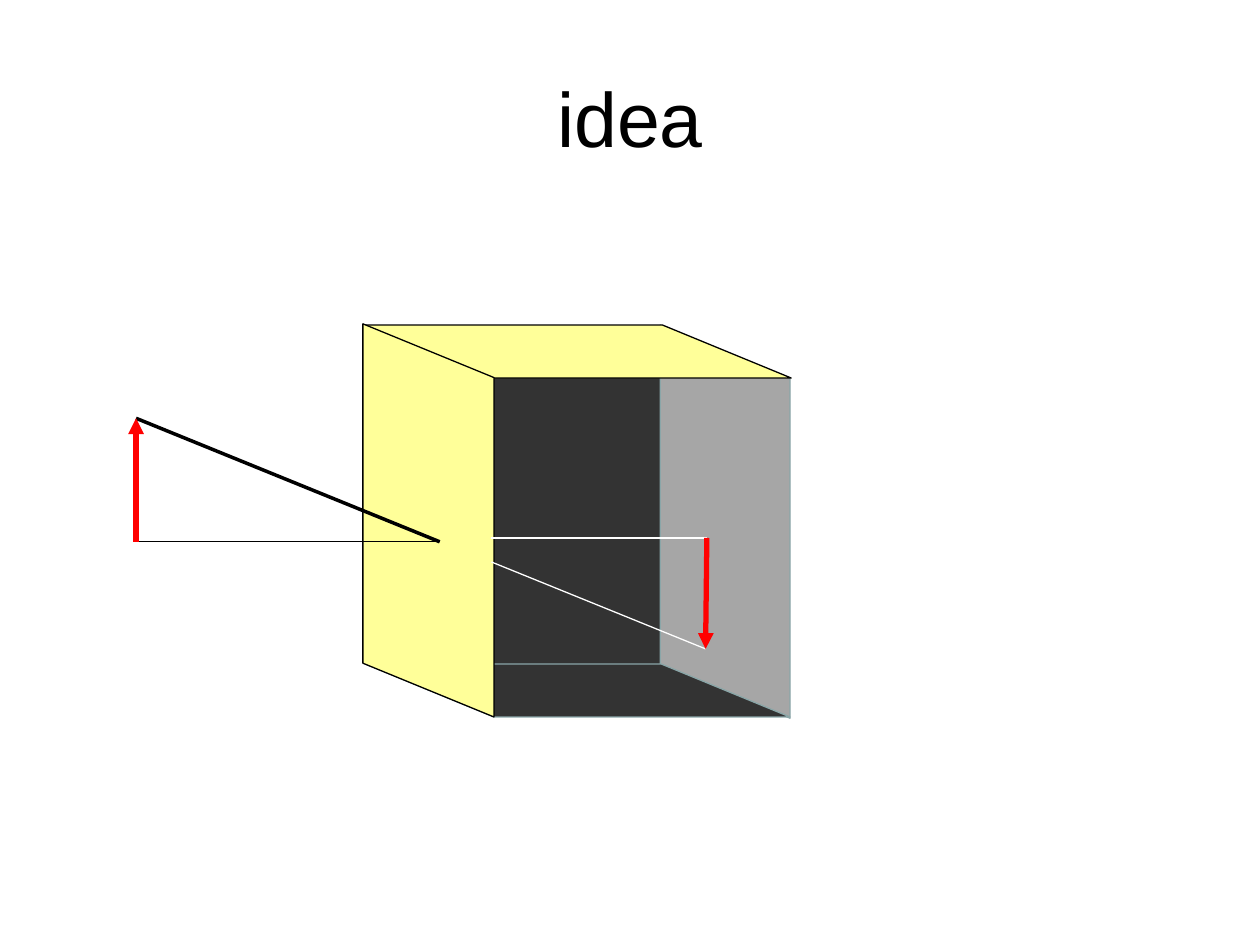
from lxml import etree
from pptx import Presentation
from pptx.dml.color import RGBColor
from pptx.enum.shapes import MSO_CONNECTOR, MSO_SHAPE
from pptx.enum.text import MSO_ANCHOR, PP_ALIGN
from pptx.oxml.ns import qn
from pptx.util import Inches, Pt

PARALLELOGRAM = MSO_SHAPE.PARALLELOGRAM
STRAIGHT = MSO_CONNECTOR.STRAIGHT
MIDDLE = MSO_ANCHOR.MIDDLE
CENTER = PP_ALIGN.CENTER

WIDTH, HEIGHT = Inches(10), Inches(7.5)
COLUMNS = 100
UNIT = WIDTH / COLUMNS

COLORS = {
    "text": "000000",
    "outside": "FFFF99",
    "inside": "333333",
    "screen": "A6A6A6",
    "outer edge": "000000",
    "inner edge": "8AA6A8",
    "outer ray": "000000",
    "inner ray": "FFFFFF",
    "arrow": "FF0000",
}


def color(name):
    return RGBColor.from_string(COLORS[name])


def grid(*cells):
    return [round(cell * UNIT) for cell in cells]


def add_title(slide, text):
    title = slide.shapes.title
    title.left, title.top, title.width, title.height = grid(5, 3, 90, 12.5)
    title.text_frame.text = text
    title.text_frame.vertical_anchor = MIDDLE
    heading = title.text_frame.paragraphs[0]
    heading.alignment = CENTER
    heading.font.name = "Arial"
    heading.font.size = Pt(44)
    heading.font.color.rgb = color("text")


def add_face(slide, column, row, columns, rows, slant, fill, edge, upright):
    if upright:
        column += (columns - rows) / 2
        row += (rows - columns) / 2
        columns, rows = rows, columns
    face = slide.shapes.add_shape(PARALLELOGRAM, *grid(column, row, columns, rows))
    face.adjustments[0] = slant
    face.shadow.inherit = False
    face.fill.solid()
    face.fill.fore_color.rgb = color(fill)
    face.line.color.rgb = color(edge)
    face.line.width = Pt(0)
    if upright:
        face.rotation = 90
    else:
        face._element.spPr.xfrm.set("flipH", "1")


def add_ray(slide, start, end, name, width=0.75, arrow=False):
    ray = slide.shapes.add_connector(STRAIGHT, *grid(*start, *end))
    ray.line.color.rgb = color(name)
    ray.line.width = Pt(width)
    if arrow:
        etree.SubElement(ray.line._get_or_add_ln(), qn("a:tailEnd"), type="triangle")
    etree.SubElement(ray._element.spPr, qn("a:effectLst"))


def add_box(slide):
    side_slant, level_slant = 0.41, 2.43
    add_face(slide, 37.3, 28.2, 18.8, 26.4, 0, "inside", "inner edge", True)
    add_face(slide, 52.4, 25.8, 10.3, 31.2, side_slant, "screen", "inner edge", True)
    add_face(slide, 29, 52.7, 33.7, 4.2, level_slant, "inside", "inner edge", False)
    add_face(slide, 28.8, 25.8, 34, 4.2, level_slant, "outside", "outer edge", False)
    add_face(slide, 28.8, 25.7, 10.4, 31.2, side_slant, "outside", "outer edge", True)


def add_light(slide):
    object_foot, object_tip, pinhole = (10.8, 43), (10.8, 33.2), (34.9, 43)
    image_foot, image_tip = (56.1, 42.7), (56, 51.5)
    add_ray(slide, object_foot, pinhole, "outer ray")
    add_ray(slide, (39, 42.7), image_foot, "inner ray")
    add_ray(slide, object_tip, pinhole, "outer ray", width=0)
    add_ray(slide, (39, 44.6), image_tip, "inner ray")
    for foot, tip in ((object_foot, object_tip), (image_foot, image_tip)):
        add_ray(slide, foot, tip, "arrow", width=3, arrow=True)


def main():
    deck = Presentation()
    deck.slide_width, deck.slide_height = WIDTH, HEIGHT
    slide = deck.slides.add_slide(deck.slide_layouts[5])
    add_title(slide, "idea")
    add_box(slide)
    add_light(slide)
    deck.save("out.pptx")


if __name__ == "__main__":
    main()
